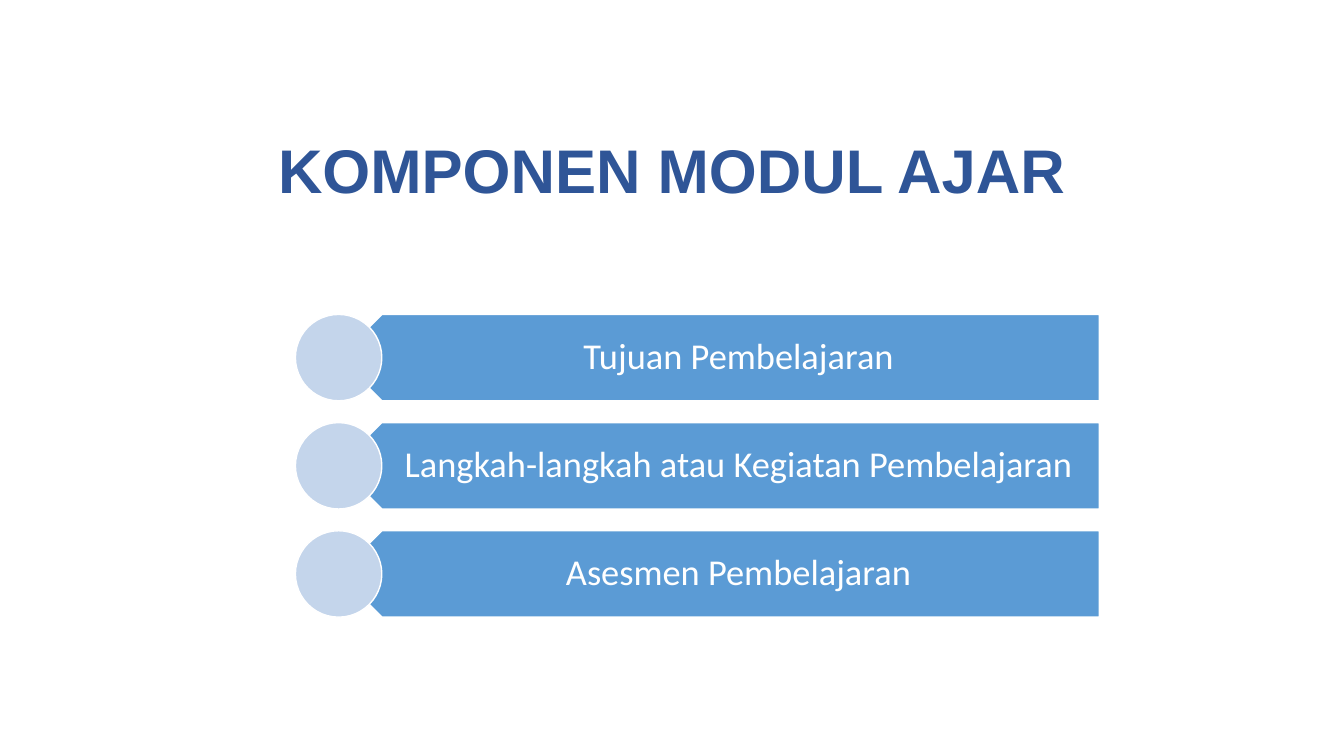
"""Build the slide listing the components of a teaching module."""
import pptx
import pptx.util
import pptx.dml.color
import pptx.enum.shapes
import pptx.enum.text

Pt = pptx.util.Pt
Kind = pptx.enum.shapes.MSO_SHAPE
Align = pptx.enum.text.PP_ALIGN
Anchor = pptx.enum.text.MSO_ANCHOR


def paint(target, color):
    if hasattr(target, "solid"):
        target.solid()
        target = target.fore_color
    target.rgb = pptx.dml.color.RGBColor.from_string(color)


def write(frame, text, font, size, color, bold=False):
    frame.text = text
    frame.word_wrap = True
    frame.vertical_anchor = Anchor.MIDDLE
    para = frame.paragraphs[0]
    para.alignment = Align.CENTER
    para.line_spacing = 0.9
    run = para.runs[0]
    run.font.name = font
    run.font.size = Pt(size)
    run.font.bold = bold
    paint(run.font.color, color)


deck = pptx.Presentation()
deck.slide_width = Pt(960)
deck.slide_height = Pt(540)
slide = deck.slides.add_slide(deck.slide_layouts[5])

title = slide.shapes.title
title.left, title.top, title.width, title.height = Pt(66), Pt(72), Pt(828), Pt(104.4)
write(title.text_frame, "KOMPONEN MODUL AJAR", "Arial", 44, "2F5597", True)

parts = [
    "Tujuan Pembelajaran",
    "Langkah-langkah atau Kegiatan Pembelajaran",
    "Asesmen Pembelajaran",
]
size = 61.7
group = slide.shapes.add_group_shape().shapes
for row, part in enumerate(parts):
    top = Pt(224.6 + row * 77.25)
    arrow = group.add_shape(Kind.PENTAGON, Pt(241.9), top, Pt(543.4), Pt(size))
    arrow.rotation = 180

    label = group.add_textbox(Pt(257.3), top, Pt(528), Pt(size))
    frame = label.text_frame
    write(frame, part, "Calibri", 26, "FFFFFF")
    frame.margin_left, frame.margin_right = Pt(27.2), Pt(14.4)
    frame.margin_top = frame.margin_bottom = Pt(7.8)

    disc = group.add_shape(Kind.OVAL, Pt(211), top, Pt(size), Pt(size))
    for shape, color in ((arrow, "5B9BD5"), (disc, "C4D5EB")):
        shape.shadow.inherit = False
        paint(shape.fill, color)
        paint(shape.line.fill, "FFFFFF")
        shape.line.width = Pt(1)

deck.save("out.pptx")
